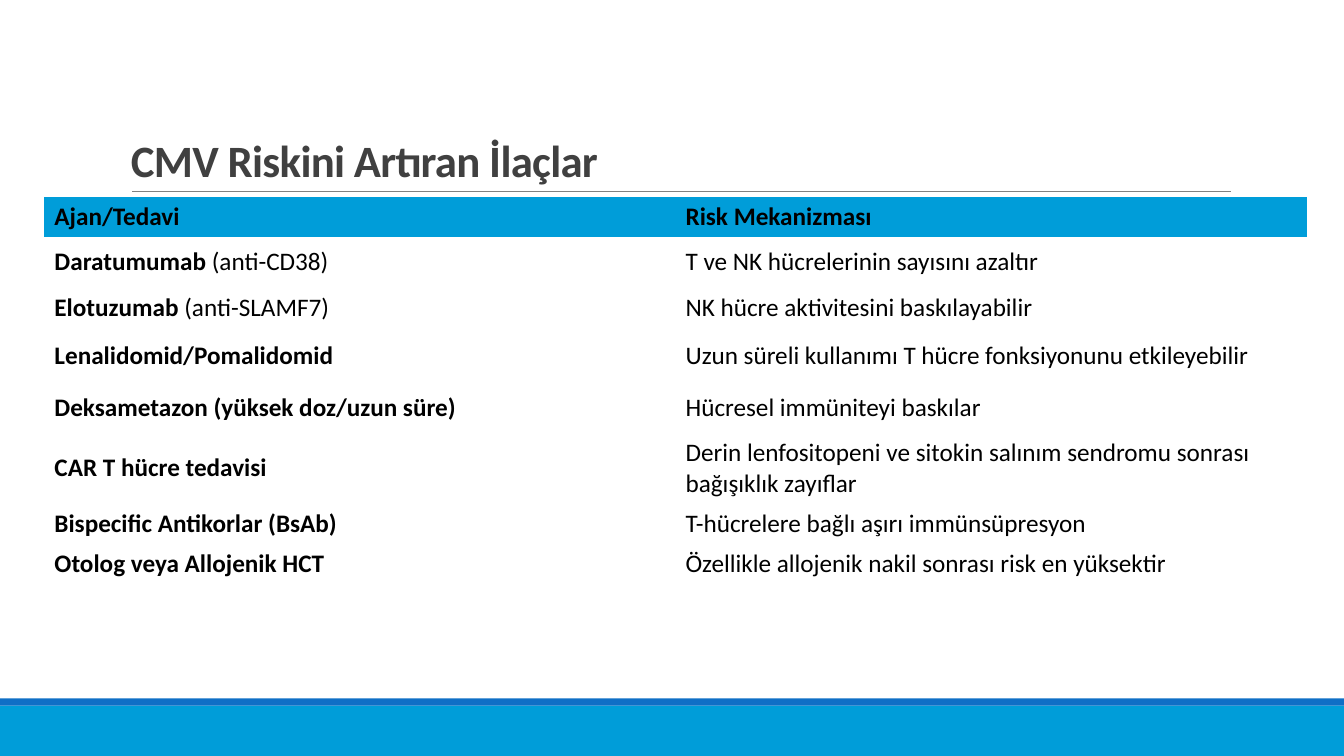
from dataclasses import dataclass

from lxml.etree import SubElement
from pptx import Presentation
from pptx.dml.color import RGBColor
from pptx.enum.shapes import MSO_CONNECTOR, MSO_SHAPE
from pptx.enum.text import MSO_ANCHOR
from pptx.oxml.ns import qn
from pptx.util import Inches, Pt


@dataclass(frozen=True)
class Theme:
    font: str = "Calibri"
    title_size: int = 32
    table_size: int = 18
    title: str = "404040"
    text: str = "000000"
    accent: str = "009DD9"
    stripe: str = "0F6FC6"
    rule: str = "808080"


THEME = Theme()
NO_GRID_STYLE = "{2D5ABB26-0587-4C30-8999-92F81FD0307C}"
HEADER = ("Ajan/Tedavi", "Risk Mekanizması")
# Row height, agent, note after the agent, risk mechanism
TREATMENTS = (
    (0.5, "Daratumumab", " (anti-CD38)", "T ve NK hücrelerinin sayısını azaltır"),
    (0.4, "Elotuzumab", " (anti-SLAMF7)", "NK hücre aktivitesini baskılayabilir"),
    (0.56, "Lenalidomid/Pomalidomid", "",
     "Uzun süreli kullanımı T hücre fonksiyonunu etkileyebilir"),
    (0.48, "Deksametazon (yüksek doz/uzun süre)", "", "Hücresel immüniteyi baskılar"),
    (0.57, "CAR T hücre tedavisi", "",
     "Derin lenfositopeni ve sitokin salınım sendromu sonrası bağışıklık zayıflar"),
    (0.4, "Bispecific Antikorlar (BsAb)", "", "T-hücrelere bağlı aşırı immünsüpresyon"),
    (0.4, "Otolog veya Allojenik HCT", "",
     "Özellikle allojenik nakil sonrası risk en yüksektir"),
)


def rgb(color):
    return RGBColor.from_string(color)


def add_text(paragraph, text, *, size=THEME.table_size, color=THEME.text,
             bold=False, tracking=None):
    """Append a formatted run; tracking is in points."""
    run = paragraph.add_run()
    run.text = text
    run.font.name = THEME.font
    run.font.size = Pt(size)
    run.font.bold = bold
    run.font.color.rgb = rgb(color)
    if tracking is not None:
        run.font._element.set("spc", str(int(tracking * 100)))


def add_band(slide, top, height, color):
    band = slide.shapes.add_shape(
        MSO_SHAPE.RECTANGLE, 0, Inches(top), Inches(13.33), Inches(height))
    band.shadow.inherit = False
    band.fill.solid()
    band.fill.fore_color.rgb = rgb(color)
    band.line.fill.background()


def add_rule(slide, left, right, y):
    rule = slide.shapes.add_connector(
        MSO_CONNECTOR.STRAIGHT, Inches(left), Inches(y), Inches(right), Inches(y))
    rule.line.color.rgb = rgb(THEME.rule)
    rule.line.width = Pt(0.5)
    SubElement(rule._element.spPr, qn("a:effectLst"))


def add_title(slide, text):
    frame = slide.shapes.add_textbox(
        Inches(1.2), Inches(0.31), Inches(11), Inches(1.59)).text_frame
    frame.word_wrap = True
    frame.vertical_anchor = MSO_ANCHOR.BOTTOM
    heading = frame.paragraphs[0]
    heading.line_spacing = 0.85
    add_text(heading, text, size=THEME.title_size, color=THEME.title,
             bold=True, tracking=-0.5)


def fill_cell(cell, *, strong="", plain="", fill=None):
    cell.vertical_anchor = MSO_ANCHOR.MIDDLE
    if fill:
        cell.fill.solid()
        cell.fill.fore_color.rgb = rgb(fill)
    else:
        cell.fill.background()
    paragraph = cell.text_frame.paragraphs[0]
    for text, bold in ((strong, True), (plain, False)):
        if text:
            add_text(paragraph, text, bold=bold)


def add_risk_table(slide):
    heights = [0.4] + [treatment[0] for treatment in TREATMENTS]
    frame = slide.shapes.add_table(
        len(heights), len(HEADER), Inches(0.44), Inches(1.95),
        Inches(12.52), Inches(sum(heights)))
    table = frame.table
    table.horz_banding = False
    table._tbl.tblPr.find(qn("a:tableStyleId")).text = NO_GRID_STYLE
    for row, height in zip(table.rows, heights):
        row.height = Inches(height)
    for column, label in enumerate(HEADER):
        fill_cell(table.cell(0, column), strong=label, fill=THEME.accent)
    for row, (_, agent, note, mechanism) in enumerate(TREATMENTS, start=1):
        fill_cell(table.cell(row, 0), strong=agent, plain=note)
        fill_cell(table.cell(row, 1), plain=mechanism)


def main():
    deck = Presentation()
    deck.slide_width, deck.slide_height = Inches(13.33), Inches(7.5)
    slide = deck.slides.add_slide(deck.slide_layouts[6])
    add_band(slide, 7, 0.5, THEME.accent)
    add_band(slide, 6.93, 0.07, THEME.stripe)
    add_rule(slide, 1.31, 12.21, 1.9)
    add_title(slide, "CMV Riskini Artıran İlaçlar")
    add_risk_table(slide)
    deck.save("out.pptx")


if __name__ == "__main__":
    main()
